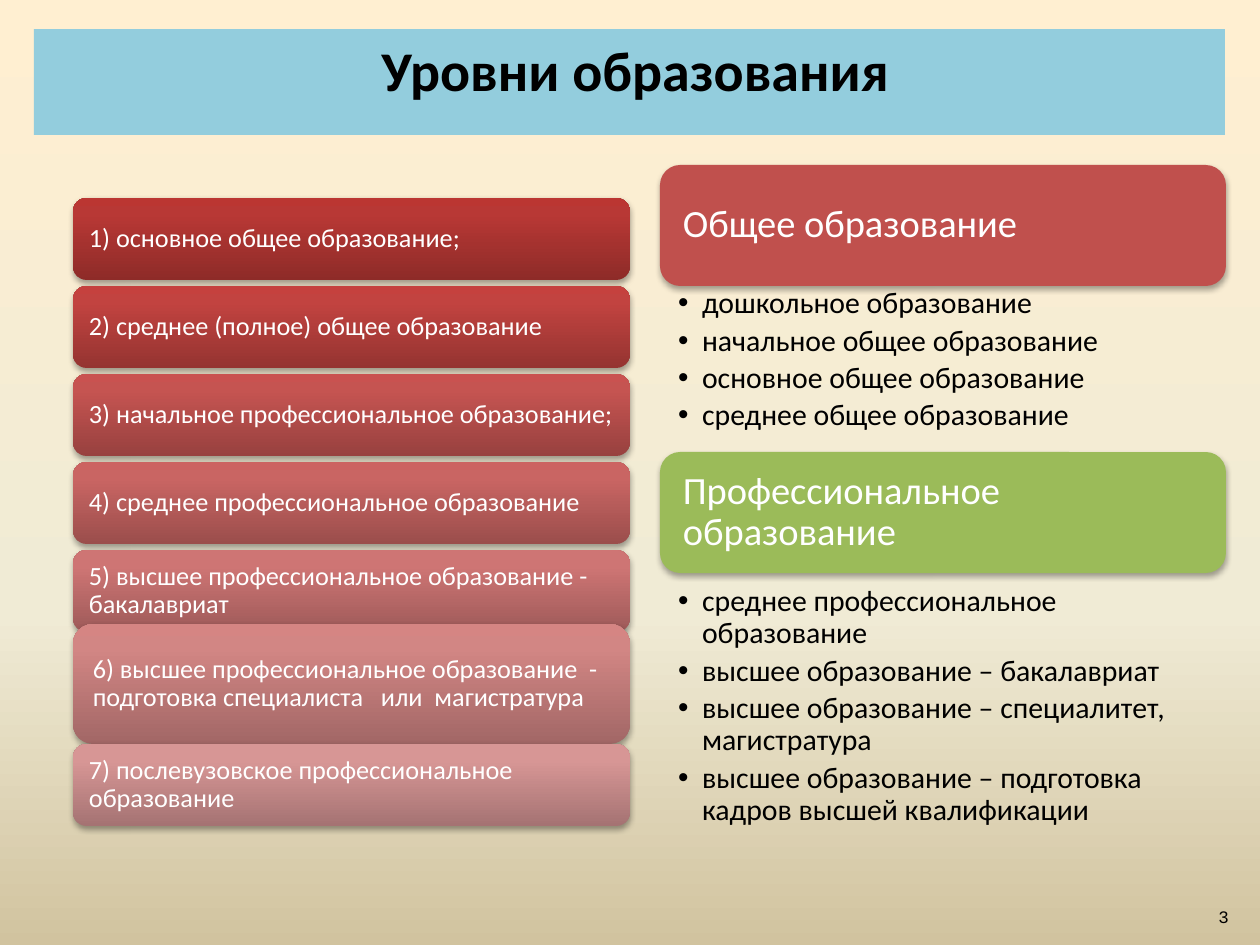
from copy import deepcopy

from pptx import Presentation
from pptx.dml.color import RGBColor
from pptx.enum.shapes import MSO_SHAPE as Shape
from pptx.enum.text import MSO_ANCHOR as Anchor, MSO_AUTO_SIZE as Fit, PP_ALIGN as Align
from pptx.oxml import parse_xml
from pptx.oxml.ns import nsdecls, qn
from pptx.util import Pt

SCALE = 914400 / 126
BLACK, WHITE = RGBColor(0, 0, 0), RGBColor(255, 255, 255)
SKY = RGBColor(0x93, 0xCD, 0xDD)
RED = RGBColor(0xC0, 0x50, 0x4D)
GREEN = RGBColor(0x9B, 0xBB, 0x59)
SAND = [(0, RGBColor(0xFF, 0xEF, 0xD1)), (0.65, RGBColor(0xF0, 0xEB, 0xD5)),
        (1, RGBColor(0xD1, 0xC3, 0x9F))]

# Text, then the gradient's dark, middle and light tones
LEVELS = [
    ("1) основное общее образование;", "8E2B28 B83835 BB3632"),
    ("2) среднее (полное) общее образование", "953431 C24340 C5413E"),
    ("3) начальное профессиональное образование;", "98413F C55451 C95250"),
    ("4) среднее профессиональное образование", "9B4E4C C96563 CC6361"),
    ("5) высшее профессиональное образование - бакалавриат", "9E5A59 CE7574 D07472"),
    ("6) высшее профессиональное образование  -  подготовка специалиста   или  магистратура",
     "A26766 D28684 D58583"),
    ("7) послевузовское профессиональное образование", "A57373 D79695 D99594"),
]
CARD_TOP, CARD_STEP, CARD_H = 198, 88, 82
TALL_TOP, TALL_H = 624, 120

# Heading, its colour and top, then the list, its top and height
GROUPS = [
    ("Общее образование", RED, 165,
     ["дошкольное образование", "начальное общее образование",
      "основное общее образование", "среднее общее образование"], 284, 163),
    ("Профессиональное образование", GREEN, 452,
     ["среднее профессиональное образование", "высшее образование – бакалавриат",
      "высшее образование – специалитет, магистратура",
      "высшее образование – подготовка кадров высшей квалификации"], 582, 263),
]


def px(n):
    return round(n * SCALE)


def place(shape, *box):
    for name, n in zip(("left", "top", "width", "height"), box):
        setattr(shape, name, px(n))


def write(shape, lines, size, color, pads, anchor, font="Calibri", bold=False, **para):
    """Fill a text frame; pads are left, top, right and bottom in px."""
    frame = shape.text_frame
    frame.text = "\n".join(lines)
    form = {"word_wrap": True, "auto_size": Fit.NONE, "vertical_anchor": anchor}
    for side, n in zip(("left", "top", "right", "bottom"), pads):
        form["margin_" + side] = px(n)
    for name, value in form.items():
        setattr(frame, name, value)
    for par in frame.paragraphs:
        for name, value in para.items():
            setattr(par, name, value)
        for name, value in {"name": font, "size": Pt(size), "bold": bold}.items():
            setattr(par.font, name, value)
        par.font.color.rgb = color


def blend(fill, root, stops, angle):
    """Give the fill, found under root, a gradient of three stops."""
    fill.gradient()
    fill.gradient_angle = angle
    marks = root.find(".//" + qn("a:gsLst"))
    marks.insert(1, deepcopy(marks[0]))
    for mark, (pos, color) in zip(fill.gradient_stops, stops):
        mark.position = pos
        mark.color.rgb = color


def add_card(slide, box, text, size, pad):
    """Add a rounded box with a soft shadow, leaving its fill to the caller."""
    card = slide.shapes.add_shape(Shape.ROUNDED_RECTANGLE, *map(px, box))
    card.line.fill.background()
    card._element.spPr.append(parse_xml(
        f'<a:effectLst {nsdecls("a")}><a:outerShdw blurRad="40000" dist="23000" '
        'dir="5400000" rotWithShape="0"><a:srgbClr val="000000"><a:alpha val="35000"/>'
        '</a:srgbClr></a:outerShdw></a:effectLst>'))
    write(card, [text], size, WHITE, [pad] * 4, Anchor.MIDDLE,
          alignment=Align.LEFT, line_spacing=0.9)
    return card


def add_levels(slide):
    spots = [(CARD_TOP + i * CARD_STEP, CARD_H) for i in range(5)]
    spots += [(TALL_TOP, TALL_H), (TALL_TOP + TALL_H, CARD_H)]
    for (text, tones), (top, high) in zip(LEVELS, spots):
        pad = 14 if high == TALL_H else 12
        card = add_card(slide, (73, top, 557, high), text, 15, pad)
        colors = map(RGBColor.from_string, tones.split())
        blend(card.fill, card._element.spPr, list(zip((0, 0.8, 1), colors)), 90)


def fill_list(body, items, top, high):
    place(body, 660, top, 566, high)
    write(body, items, 17, BLACK, (18, 4, 21, 4), Anchor.TOP,
          line_spacing=0.9, space_before=Pt(0), space_after=Pt(3))
    for par in body.text_frame.paragraphs:
        props = par._p.get_or_add_pPr()
        props.set("marL", str(px(24)))
        props.set("indent", str(px(-24)))


def add_groups(slide):
    bodies = list(slide.placeholders)[1:]
    for body, (head, color, top, items, start, high) in zip(bodies, GROUPS):
        card = add_card(slide, (660, top, 566, 121), head, 22, 17)
        card.fill.solid()
        card.fill.fore_color.rgb = color
        fill_list(body, items, start, high)


def set_title(slide):
    title = slide.shapes.title
    place(title, 34, 29, 1191, 106)
    title.fill.solid()
    title.fill.fore_color.rgb = SKY
    write(title, ["Уровни образования"], 32, BLACK, (25, 6, 13, 6), Anchor.TOP,
          bold=True, alignment=Align.CENTER, space_before=Pt(3))


def add_number(slide):
    box = slide.shapes.add_textbox(*map(px, (1192, 883, 50, 50)))
    write(box, ["3"], 10, BLACK, (13, 6, 13, 6), Anchor.BOTTOM,
          font="Courier New", alignment=Align.RIGHT)


def main():
    deck = Presentation()
    deck.slide_width, deck.slide_height = px(1260), px(945)
    slide = deck.slides.add_slide(deck.slide_layouts.get_by_name("Two Content"))
    blend(slide.background.fill, slide._element, SAND, 270)
    set_title(slide)
    add_levels(slide)
    add_number(slide)
    add_groups(slide)
    deck.save("out.pptx")


if __name__ == "__main__":
    main()
